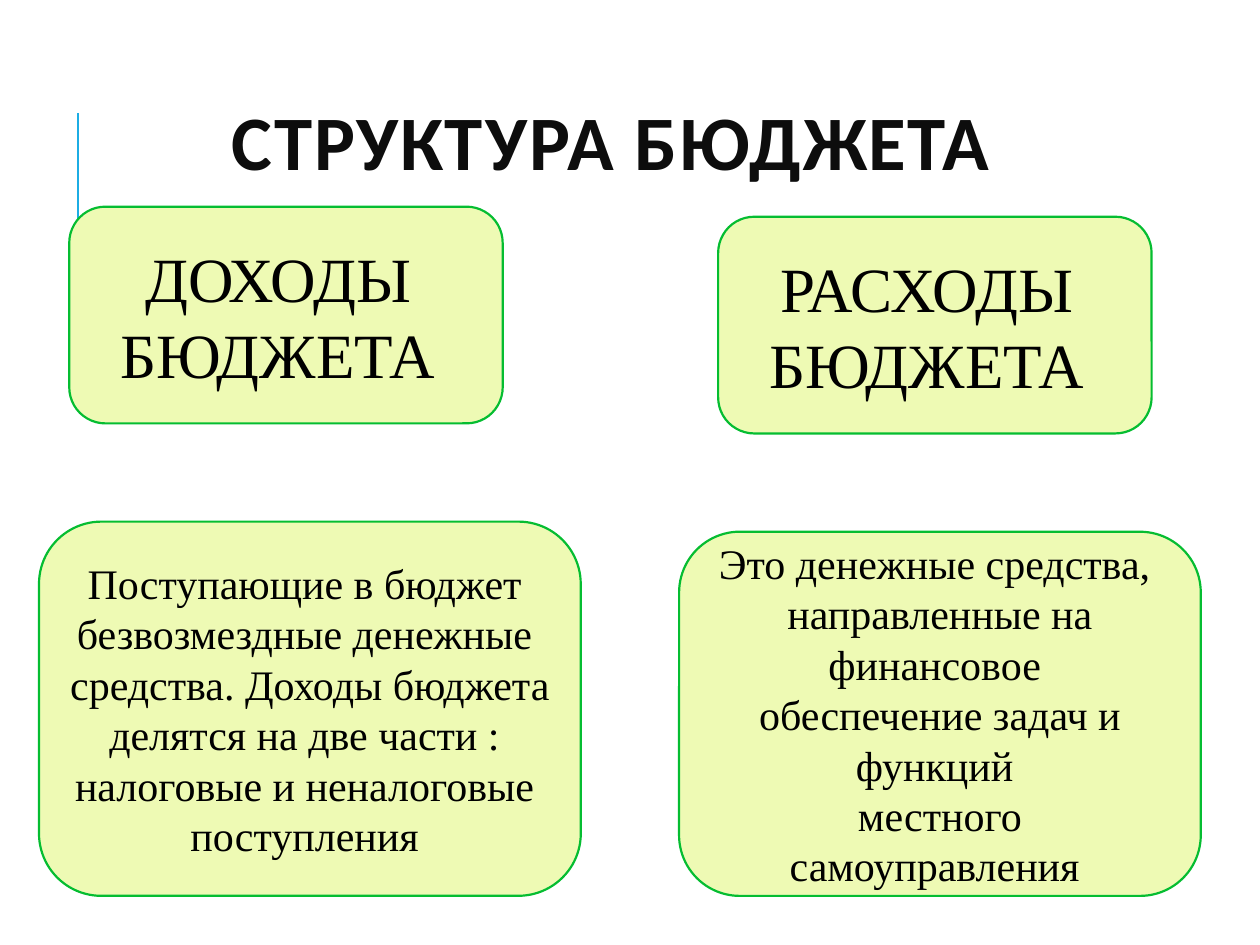
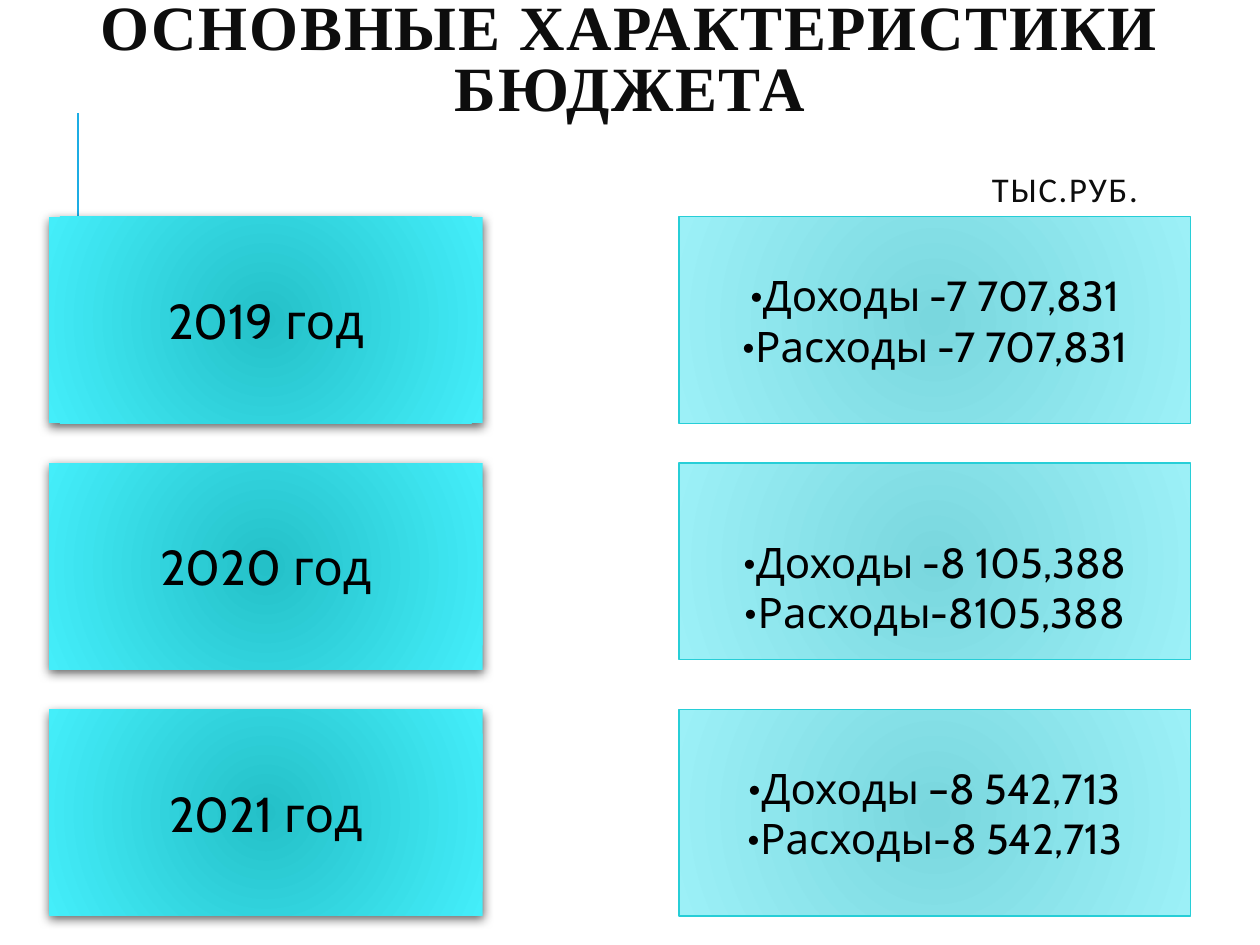
from dataclasses import dataclass

from lxml.etree import SubElement
from pptx import Presentation
from pptx.dml.color import RGBColor
from pptx.enum.shapes import MSO_CONNECTOR, MSO_SHAPE
from pptx.enum.text import MSO_ANCHOR, MSO_AUTO_SIZE, PP_ALIGN
from pptx.oxml.ns import qn
from pptx.util import Inches, Pt


@dataclass(frozen=True)
class Theme:
    title_color: str = "0D0D0D"
    text_color: str = "000000"
    rule_color: str = "1CADE4"
    card_fill: str = "EEFAB4"
    card_line: str = "05BD31"
    year_gradient: tuple = ("24C0C8", "44EEFA")
    figures_gradient: tuple = ("79D7DE", "9CF0F7")
    figures_line: str = "27CED7"
    sans: str = "Calibri"
    serif: str = "Times New Roman"
    rounded: str = "Cabin"
    title_size: float = 44
    long_title_size: float = 36
    unit_size: float = 19.8
    heading_size: float = 36
    year_size: float = 28
    body_size: float = 24


THEME = Theme()

BUDGET_PARTS = [
    ((0.55, 1.64, 3.44, 1.72), THEME.heading_size, ["ДОХОДЫ ", "БЮДЖЕТА "]),
    ((5.7, 1.72, 3.44, 1.72), THEME.heading_size, ["РАСХОДЫ ", "БЮДЖЕТА "]),
    ((0.31, 4.14, 4.3, 2.97), THEME.body_size, [
        "Поступающие в бюджет ",
        "безвозмездные денежные ",
        "средства. Доходы бюджета ",
        "делятся на две части : ",
        "налоговые и неналоговые ",
        "поступления ",
    ]),
    ((5.39, 4.22, 4.14, 2.89), THEME.body_size, [
        "Это денежные средства, ",
        "направленные на финансовое ",
        "обеспечение задач и функций ",
        "местного самоуправления ",
    ]),
]

YEARS = [
    ("2019 год", ["Доходы -7 707,831", "Расходы -7 707,831"], 1.64, 0.05),
    ("2020 год", ["Доходы -8 105,388", "Расходы-8105,388"], 1.56, 0.45),
    ("2021 год", ["Доходы –8 542,713", "Расходы-8 542,713"], 1.64, 0.05),
]


def color(value):
    return RGBColor.from_string(value)


def write_text(shape, lines, *, size, font, text_color=THEME.text_color, bold=False,
               align=PP_ALIGN.CENTER, anchor=MSO_ANCHOR.MIDDLE, line_spacing=None,
               tracking=0, bullet=False, margin_left=0.1, margin_top=0.05):
    frame = shape.text_frame
    frame.word_wrap = True
    frame.auto_size = MSO_AUTO_SIZE.NONE
    frame.vertical_anchor = anchor
    frame.margin_left = Inches(margin_left)
    frame.margin_top = Inches(margin_top)
    for index, line in enumerate(lines):
        paragraph = frame.add_paragraph() if index else frame.paragraphs[0]
        paragraph.alignment = align
        if line_spacing:
            paragraph.line_spacing = line_spacing
        if bullet:
            add_bullet(paragraph)
        run = paragraph.add_run()
        run.text = line
        run.font.size = Pt(size)
        run.font.name = font
        run.font.bold = bold
        run.font.color.rgb = color(text_color)
        if tracking:
            run._r.get_or_add_rPr().set("spc", str(tracking * 100))


def add_bullet(paragraph):
    properties = paragraph._p.get_or_add_pPr()
    properties.set("marL", "0")
    properties.set("indent", "0")
    SubElement(properties, qn("a:buFont")).set("typeface", THEME.rounded)
    SubElement(properties, qn("a:buChar")).set("char", "•")


def add_box(slide, kind, bounds, line_color=None, line_width=1.0):
    shape = slide.shapes.add_shape(kind, *map(Inches, bounds))
    shape.shadow.inherit = False
    if line_color:
        shape.line.color.rgb = color(line_color)
        shape.line.width = Pt(line_width)
    else:
        shape.line.fill.background()
    return shape


def fill_radial(shape, colors):
    shape.fill.gradient()
    for stop, value in zip(shape.fill.gradient_stops, colors):
        stop.color.rgb = color(value)
    gradient = shape._element.spPr.find(qn("a:gradFill"))
    gradient.remove(gradient.find(qn("a:lin")))
    radial = SubElement(gradient, qn("a:path"), {"path": "circle"})
    SubElement(radial, qn("a:fillToRect"), dict.fromkeys("ltrb", "100000"))


def add_drop_shadow(shape):
    effects = shape._element.spPr.find(qn("a:effectLst"))
    shadow = SubElement(effects, qn("a:outerShdw"), {
        "blurRad": str(Pt(6)), "dist": str(Pt(2)), "dir": "5400000",
        "algn": "ctr", "rotWithShape": "0",
    })
    shadow_color = SubElement(shadow, qn("a:srgbClr"), {"val": "000000"})
    SubElement(shadow_color, qn("a:alpha"), {"val": "60000"})


def add_titled_slide(presentation, title, bounds, **text_format):
    slide = presentation.slides.add_slide(presentation.slide_layouts[5])
    shape = slide.shapes.title
    shape.left, shape.top, shape.width, shape.height = map(Inches, bounds)
    write_text(shape, [title], text_color=THEME.title_color, bold=True,
               line_spacing=0.8, tracking=1, **text_format)
    rule = slide.shapes.add_connector(
        MSO_CONNECTOR.STRAIGHT, Inches(0.62), Inches(1.9), Inches(0.62), Inches(0.9))
    rule.line.color.rgb = color(THEME.rule_color)
    rule.line.width = Pt(1.5)
    SubElement(rule._element.spPr, qn("a:effectLst"))
    return slide


def add_card(slide, bounds, size, lines):
    card = add_box(slide, MSO_SHAPE.ROUNDED_RECTANGLE, bounds, THEME.card_line, 1.25)
    card.fill.solid()
    card.fill.fore_color.rgb = color(THEME.card_fill)
    write_text(card, lines, size=size, font=THEME.serif)


def add_year_row(slide, top, year, figures, figures_height, figures_margin):
    year_box = add_box(slide, MSO_SHAPE.RECTANGLE, (0.39, top, 3.44, 1.64))
    fill_radial(year_box, THEME.year_gradient)
    add_drop_shadow(year_box)
    write_text(year_box, [year], size=THEME.year_size, font=THEME.rounded)

    figures_box = add_box(slide, MSO_SHAPE.RECTANGLE, (5.39, top, 4.06, figures_height),
                          THEME.figures_line, 0.75)
    fill_radial(figures_box, THEME.figures_gradient)
    write_text(figures_box, figures, size=THEME.body_size, font=THEME.rounded,
               bullet=True, margin_top=figures_margin)


def build_structure_slide(presentation):
    slide = add_titled_slide(
        presentation, "СТРУКТУРА БЮДЖЕТА", (0.84, 0.64, 7.97, 1.08),
        size=THEME.title_size, font=THEME.sans, align=PP_ALIGN.LEFT, margin_left=1)
    for bounds, size, lines in BUDGET_PARTS:
        add_card(slide, bounds, size, lines)


def build_figures_slide(presentation):
    slide = add_titled_slide(
        presentation, "ОСНОВНЫЕ ХАРАКТЕРИСТИКИ БЮДЖЕТА", (0, 0, 10, 1.41),
        size=THEME.long_title_size, font=THEME.serif, anchor=MSO_ANCHOR.TOP,
        margin_top=0.02)
    unit = slide.shapes.add_textbox(Inches(7.13), Inches(1.3), Inches(2), Inches(0.4))
    write_text(unit, ["ТЫС.РУБ."], size=THEME.unit_size, font=THEME.sans,
               text_color=THEME.title_color, align=PP_ALIGN.RIGHT, tracking=1)
    for index, row in enumerate(YEARS):
        add_year_row(slide, 1.72 + index * 1.955, *row)


def main():
    presentation = Presentation()
    presentation.slide_width = Inches(10)
    presentation.slide_height = Inches(7.5)
    build_structure_slide(presentation)
    build_figures_slide(presentation)
    presentation.save("out.pptx")


if __name__ == "__main__":
    main()
